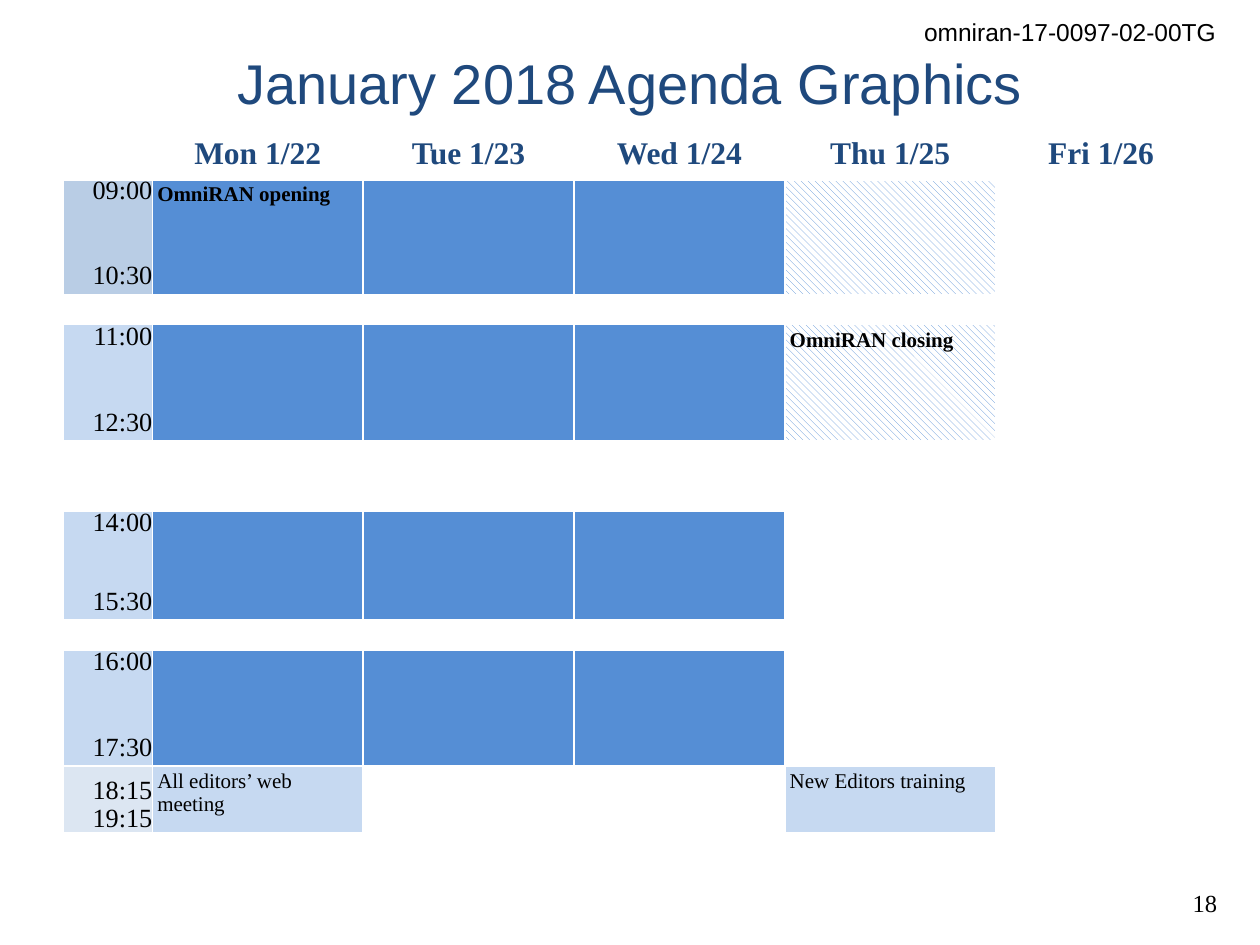
from dataclasses import dataclass

from lxml import etree
from pptx import Presentation
from pptx.dml.color import RGBColor
from pptx.enum.dml import MSO_PATTERN
from pptx.enum.text import MSO_ANCHOR, PP_ALIGN
from pptx.oxml.ns import qn
from pptx.util import Cm, Pt

LEFT, CENTER, RIGHT = PP_ALIGN.LEFT, PP_ALIGN.CENTER, PP_ALIGN.RIGHT
TOP, MIDDLE, BOTTOM = MSO_ANCHOR.TOP, MSO_ANCHOR.MIDDLE, MSO_ANCHOR.BOTTOM
HATCH = MSO_PATTERN.WIDE_DOWNWARD_DIAGONAL


@dataclass(frozen=True)
class Theme:
    sans: str = "Arial"
    serif: str = "Times New Roman"
    black: str = "000000"
    white: str = "FFFFFF"
    navy: str = "1F497D"
    session: str = "558ED5"
    first_time: str = "B9CDE5"
    light: str = "C6D9F1"
    evening: str = "DCE6F2"
    title_size: int = 32
    day_size: int = 18
    time_size: int = 15
    note_size: int = 14
    entry_size: int = 12
    empty_size: int = 6


def write_text(frame, text, *, font, size, color, bold=False, align=LEFT, spacing=1.0, gap=0):
    for index, line in enumerate(text.split("\n")):
        paragraph = frame.add_paragraph() if index else frame.paragraphs[0]
        paragraph.alignment = align
        paragraph.line_spacing = spacing
        paragraph.space_before = Pt(gap if index else 0)
        run = paragraph.add_run()
        run.text = line
        run.font.name = font
        run.font.size = Pt(size)
        run.font.bold = bold
        run.font.color.rgb = RGBColor.from_string(color)


class SlideBuilder:
    def __init__(self, slide, theme):
        self.slide = slide
        self.theme = theme

    def text_box(self, text, left, top, width, height, *, wrap=False, bottom=0.13, **style):
        shape = self.slide.shapes.add_textbox(Cm(left), Cm(top), Cm(width), Cm(height))
        frame = shape.text_frame
        frame.word_wrap = wrap
        frame.vertical_anchor = MIDDLE
        frame.margin_bottom = Cm(bottom)
        write_text(frame, text, **style)

    def table(self, left, top, widths, heights):
        shape = self.slide.shapes.add_table(
            len(heights), len(widths), Cm(left), Cm(top), Cm(sum(widths)), Cm(sum(heights)))
        table = shape.table
        table.first_row = table.horz_banding = False
        for column, width in zip(table.columns, widths):
            column.width = Cm(width)
        for index, (row, height) in enumerate(zip(table.rows, heights)):
            row.height = Cm(height)
            for cell in row.cells:
                self.borders(cell, bottom=1 if index else 3)
                self.fill(cell, self.theme.white)
                self.margins(cell, 0)
                paragraph = cell.text_frame.paragraphs[0]._p
                etree.SubElement(paragraph, qn("a:endParaRPr"), sz=str(self.theme.empty_size * 100))
        return table

    def borders(self, cell, bottom):
        properties = cell._tc.get_or_add_tcPr()
        for tag, width in (("lnL", 1), ("lnR", 1), ("lnT", 1), ("lnB", bottom)):
            line = etree.SubElement(properties, qn(f"a:{tag}"), w=str(Pt(width)))
            solid = etree.SubElement(line, qn("a:solidFill"))
            etree.SubElement(solid, qn("a:srgbClr"), val=self.theme.white)

    def margins(self, cell, size):
        cell.margin_left = cell.margin_right = Cm(size)
        cell.margin_top = cell.margin_bottom = Cm(size)

    def fill(self, cell, color):
        cell.fill.solid()
        cell.fill.fore_color.rgb = RGBColor.from_string(color)

    def hatch(self, cell):
        cell.fill.patterned()
        cell.fill.pattern = HATCH
        cell.fill.fore_color.rgb = RGBColor.from_string(self.theme.session)
        cell.fill.back_color.rgb = RGBColor.from_string(self.theme.white)

    def day(self, cell, text):
        write_text(cell.text_frame, text, font=self.theme.serif, size=self.theme.day_size,
                   color=self.theme.navy, bold=True, align=CENTER)

    def time(self, cell, text, color, gap, anchor=TOP):
        self.fill(cell, color)
        cell.vertical_anchor = anchor
        write_text(cell.text_frame, text, font=self.theme.serif, size=self.theme.time_size,
                   color=self.theme.black, align=RIGHT, spacing=0.9, gap=gap)

    def entry(self, cell, text, bold):
        self.margins(cell, 0.1)
        write_text(cell.text_frame, text, font=self.theme.serif, size=self.theme.entry_size,
                   color=self.theme.black, bold=bold, spacing=0.95)


def main():
    presentation = Presentation()
    presentation.slide_width = Cm(25.4)
    presentation.slide_height = Cm(19.05)
    theme = Theme()
    builder = SlideBuilder(presentation.slides.add_slide(presentation.slide_layouts[6]), theme)

    note = dict(size=theme.note_size, color=theme.black, align=RIGHT)
    builder.text_box("omniran-17-0097-02-00TG", 18.34, 0.22, 6.43, 0.86, font=theme.sans, **note)
    builder.text_box("18", 23.7, 17.78, 1.09, 0.86, font=theme.serif, **note)
    builder.text_box("January 2018 Agenda Graphics", 1.27, 0.76, 22.86, 1.98, wrap=True, bottom=0.3,
                     font=theme.sans, size=theme.title_size, color=theme.navy, align=CENTER)

    days = ["Mon 1/22", "Tue 1/23", "Wed 1/24", "Thu 1/25", "Fri 1/26"]
    heights = [0.86, 2.3, 0.6, 2.31, 0.59, 0.82, 2.18, 0.6, 2.33, 0.67, 0.67]
    table = builder.table(1.27, 2.74, [1.8] + [4.25] * len(days), heights)

    for column in range(5):
        for row in (4, 9):
            table.cell(row, column).merge(table.cell(row + 1, column))
    for column, first, last in ((5, 1, 3), (5, 5, 8), (4, 6, 8)):
        table.cell(first, column).merge(table.cell(last, column))

    for column, day in enumerate(days, 1):
        builder.day(table.cell(0, column), day)

    sessions = [
        (1, "09:00\n10:30", theme.first_time, 34),
        (3, "11:00\n12:30", theme.light, 34),
        (6, "14:00\n15:30", theme.light, 30),
        (8, "16:00\n17:30", theme.light, 34),
    ]
    for row, times, color, gap in sessions:
        builder.time(table.cell(row, 0), times, color, gap)
        for column in (1, 2, 3):
            builder.fill(table.cell(row, column), theme.session)
    for row in (1, 3):
        builder.hatch(table.cell(row, 4))

    builder.time(table.cell(9, 0), "18:15\n19:15", theme.evening, 1, anchor=BOTTOM)
    for column in (1, 4):
        builder.fill(table.cell(9, column), theme.light)

    builder.entry(table.cell(1, 1), "OmniRAN opening", bold=True)
    builder.entry(table.cell(3, 4), "OmniRAN closing", bold=True)
    builder.entry(table.cell(9, 1), "All editors’ web meeting", bold=False)
    builder.entry(table.cell(9, 4), "New Editors training", bold=False)

    presentation.save("out.pptx")


if __name__ == "__main__":
    main()
